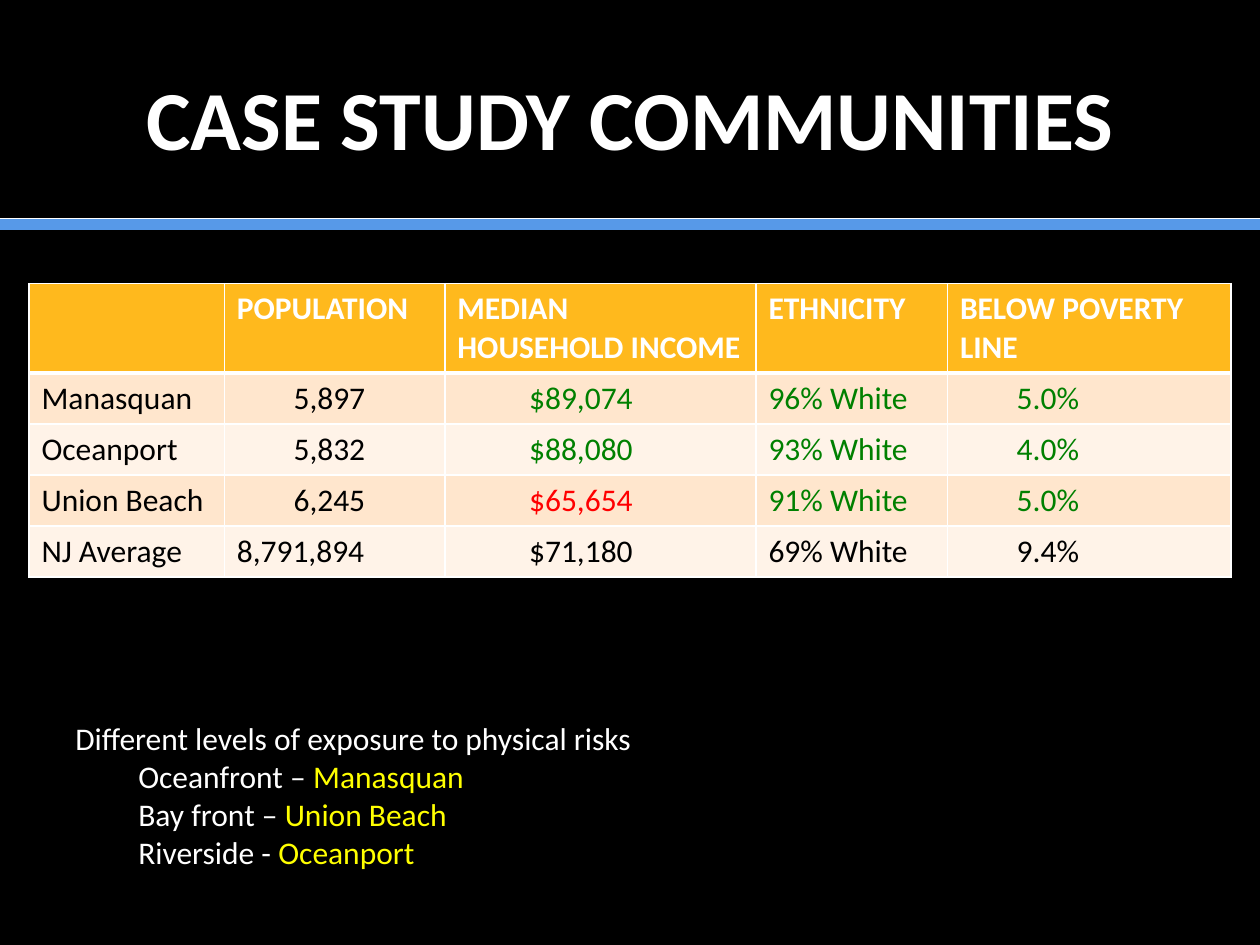
from lxml.etree import SubElement
from pptx import Presentation
from pptx.dml.color import RGBColor as RGB
from pptx.enum.shapes import MSO_CONNECTOR as CONN
from pptx.enum.text import MSO_ANCHOR as ANCHOR, PP_ALIGN as ALIGN
from pptx.oxml.ns import qn
from pptx.util import Inches, Pt

W, H = 10, 7.5
FONT = "Calibri"
COLORS = {
    "black": "000000", "white": "FFFFFF", "blue": "5799E8", "header": "FFB91D",
    "odd": "FFE6CD", "even": "FFF3E8", "good": "008000", "bad": "FF0000",
    "place": "FFFF00",
}
COLUMNS = [1.55, 1.75, 2.47, 1.52, 2.25]
INDENTS = [0.1, 0.55, 0.67, 0.1, 0.55]
HEADER_HEIGHT, ROW_HEIGHT = 0.71, 0.405
HEADERS = ["", "POPULATION", "MEDIAN\nHOUSEHOLD INCOME", "ETHNICITY", "BELOW POVERTY LINE"]
ROWS = [
    (["Manasquan", "5,897", "$89,074", "96% White", "5.0%"], ["good"] * 3),
    (["Oceanport", "5,832", "$88,080", "93% White", "4.0%"], ["good"] * 3),
    (["Union Beach", "6,245", "$65,654", "91% White", "5.0%"], ["bad", "good", "good"]),
    (["NJ Average", "8,791,894", "$71,180", "69% White", "9.4%"], ["black"] * 3),
]
EXPOSURES = [("Oceanfront – ", "Manasquan"), ("Bay front – ", "Union Beach"),
             ("Riverside - ", "Oceanport")]


def rgb(name):
    """Return the named colour."""
    return RGB.from_string(COLORS[name])


def add_run(p, text, color, size=18, bold=False):
    """Add one formatted run to a paragraph."""
    r = p.add_run()
    r.text = text
    r.font.name, r.font.size, r.font.bold = FONT, Pt(size), bold
    r.font.color.rgb = rgb(color)


def add_text_box(s, box):
    """Add a wrapping text box and return its text frame."""
    tf = s.shapes.add_textbox(*map(Inches, box)).text_frame
    tf.word_wrap = True
    return tf


def add_rule(s, y, color, width):
    """Draw a horizontal line across the slide."""
    line = s.shapes.add_connector(CONN.STRAIGHT, 0, Inches(y), Inches(W), Inches(y))
    line.line.color.rgb, line.line.width = rgb(color), Pt(width)
    SubElement(line._element.spPr, qn("a:effectLst"))


def add_title(s, box):
    """Place the centred slide title."""
    tf = add_text_box(s, box)
    tf.vertical_anchor = ANCHOR.MIDDLE
    p = tf.paragraphs[0]
    p.alignment = ALIGN.CENTER
    add_run(p, "CASE STUDY COMMUNITIES", "white", 48, True)


def set_borders(cell, top, bottom):
    """Give a cell white borders, placed ahead of its fill."""
    tc_pr = cell._tc.get_or_add_tcPr()
    for i, (side, width) in enumerate(zip("LRTB", (1, 1, top, bottom))):
        ln = SubElement(tc_pr, qn(f"a:ln{side}"), w=str(Pt(width)))
        fill = SubElement(ln, qn("a:solidFill"))
        SubElement(fill, qn("a:srgbClr"), val=COLORS["white"])
        tc_pr.insert(i, ln)


def fill_cell(cell, text, color, fill, indent, bold=False):
    """Write and colour one table cell."""
    cell.fill.solid()
    cell.fill.fore_color.rgb = rgb(fill)
    cell.margin_left = Inches(indent)
    p = cell.text_frame.paragraphs[0]
    for i, part in enumerate(text.split("\n")):
        if i:
            p.add_line_break()
        add_run(p, part, color, bold=bold)


def add_communities(s, left, top):
    """Place the table of communities."""
    heights = [HEADER_HEIGHT] + [ROW_HEIGHT] * len(ROWS)
    size = map(Inches, (left, top, sum(COLUMNS), sum(heights)))
    table = s.shapes.add_table(len(heights), len(COLUMNS), *size).table
    for col, width in zip(table.columns, COLUMNS):
        col.width = Inches(width)
    for row, height in zip(table.rows, heights):
        row.height = Inches(height)
    for c, text in enumerate(HEADERS):
        cell = table.cell(0, c)
        fill_cell(cell, text, "white", "header", 0.1, True)
        set_borders(cell, 1, 3)
    for r, (values, marks) in enumerate(ROWS, 1):
        for c, (text, color) in enumerate(zip(values, ["black"] * 2 + marks)):
            cell = table.cell(r, c)
            indent = 0.1 if text == "8,791,894" else INDENTS[c]
            fill_cell(cell, text, color, "odd" if r % 2 else "even", indent)
            set_borders(cell, 3 if r == 1 else 1, 1)


def add_exposures(s, box):
    """Place the list of exposure levels."""
    tf = add_text_box(s, box)
    add_run(tf.paragraphs[0], "Different levels of exposure to physical risks", "white")
    for setting, place in EXPOSURES:
        p = tf.add_paragraph()
        p._p.get_or_add_pPr().set("marL", str(Inches(0.5)))
        add_run(p, setting, "white")
        add_run(p, place, "place")


def main():
    """Build and save the slide."""
    prs = Presentation()
    prs.slide_width, prs.slide_height = Inches(W), Inches(H)
    s = prs.slides.add_slide(prs.slide_layouts[6])
    s.background.fill.solid()
    s.background.fill.fore_color.rgb = rgb("black")
    add_rule(s, 1.78, "blue", 7)
    add_rule(s, 1.73, "white", 0.5)
    add_title(s, (0.05 * W, 0.04 * H, 0.9 * W, 1.25))
    add_communities(s, 0.23, 0.3 * H)
    add_exposures(s, (0.05 * W, 5.66, 6.43, 1.31))
    prs.save("out.pptx")


if __name__ == "__main__":
    main()
